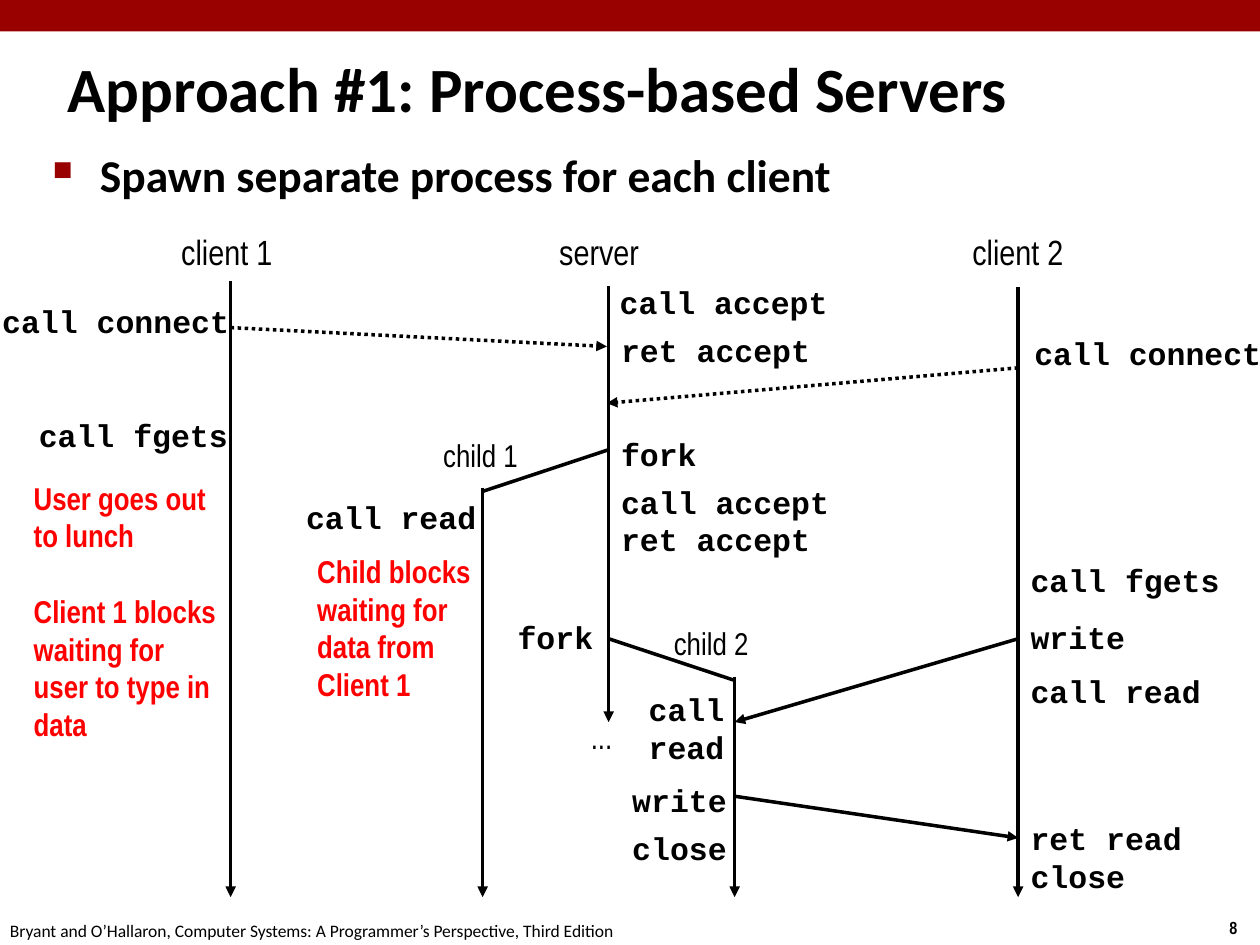
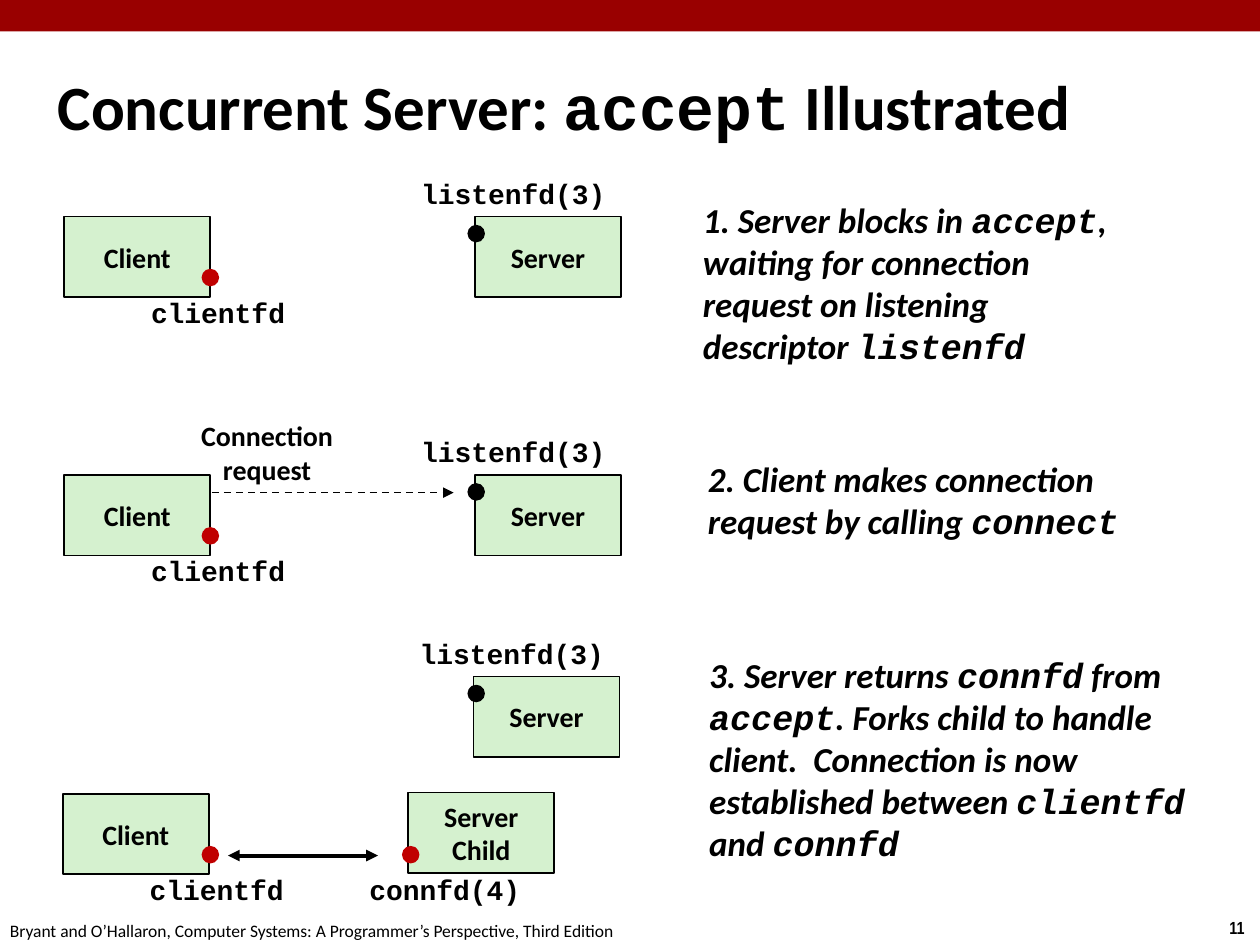
from pptx import Presentation
from pptx.dml.color import RGBColor
from pptx.enum.dml import MSO_LINE as Dash
from pptx.enum.shapes import MSO_CONNECTOR as Link, MSO_SHAPE as Shape
from pptx.enum.text import MSO_ANCHOR as Anchor, PP_ALIGN as Align
from pptx.oxml.ns import qn
from pptx.util import Pt
from lxml.etree import SubElement

BLACK = RGBColor(0x00, 0x00, 0x00)
WHITE = RGBColor(0xFF, 0xFF, 0xFF)
BAND_RED = RGBColor(0x99, 0x00, 0x00)
DOT_RED = RGBColor(0xC0, 0x00, 0x00)
ALERT_RED = RGBColor(0xFF, 0x00, 0x00)
PALE_GREEN = RGBColor(0xD5, 0xF1, 0xCF)

SANS, NARROW, MONO = "Calibri", "Arial Narrow", "Courier New"
FOOTER = "Bryant and O’Hallaron, Computer Systems: A Programmer’s Perspective, Third Edition"
NODE_WIDTH, NODE_HEIGHT, DOT_SIZE = 83.5, 46, 10
CENTERED = {"align": Align.CENTER, "anchor": Anchor.MIDDLE, "wrap": False}


def set_all(target, values):
    for name, value in values.items():
        setattr(target, name, value)


class Deck:
    def __init__(self):
        self.file = Presentation()
        set_all(self.file, {"slide_width": Pt(720), "slide_height": Pt(540)})
        self.page = None

    def new_page(self, number, title, *title_place):
        self.page = self.file.slides.add_slide(self.file.slide_layouts[6])
        background = self.page.background.fill
        background.solid()
        background.fore_color.rgb = WHITE
        self.shape(Shape.RECTANGLE, 0, 0, 720, 18, BAND_RED)
        self.text(number, 695.5, 520.6, 24.5, 19.4, font=NARROW, size=10, bold=True, wrap=False)
        self.text(FOOTER, -1.4, 522, 366, 19.4, size=10, wrap=False)
        self.text(title, *title_place, size=36, bold=True, anchor=Anchor.MIDDLE)

    def fill_text(self, box, words, font=SANS, size=18, bold=False, italic=False, color=BLACK,
                  align=Align.LEFT, anchor=Anchor.TOP, wrap=True):
        """Fill a box; newlines split paragraphs and backticks mark code."""
        frame = box.text_frame
        set_all(frame, {"word_wrap": wrap, "vertical_anchor": anchor})
        for index, line in enumerate(words.split("\n")):
            para = frame.add_paragraph() if index else frame.paragraphs[0]
            para.alignment = align
            for part, piece in enumerate(line.split("`")):
                if piece:
                    span = para.add_run()
                    span.text = piece
                    set_all(span.font, {"name": MONO if part % 2 else font, "size": Pt(size),
                                        "bold": bold, "italic": italic})
                    span.font.color.rgb = color

    def text(self, words, left, top, width, height, **style):
        box = self.page.shapes.add_textbox(Pt(left), Pt(top), Pt(width), Pt(height))
        self.fill_text(box, words, **style)
        return box

    def code(self, words, left, top, size=18, **style):
        longest = max(len(line) for line in words.split("\n"))
        style = {"font": MONO, "bold": True, "wrap": False, **style}
        self.text(words, left, top, longest * size * 0.6 + 14.4, size * 1.6, size=size, **style)

    def bullet(self, words, left, top, width, height, **style):
        box = self.text(words, left, top, width, height, **style)
        para = box.text_frame.paragraphs[0]
        para.space_before = Pt(5.2)
        props = para._p.get_or_add_pPr()
        props.set("marL", str(Pt(27)))
        props.set("indent", str(Pt(-27)))
        SubElement(SubElement(props, qn("a:buClr")), qn("a:srgbClr"), val=str(BAND_RED))
        SubElement(props, qn("a:buSzPct"), val="60000")
        SubElement(props, qn("a:buChar"), char="■")

    def shape(self, kind, left, top, width, height, fill, outline=None):
        box = self.page.shapes.add_shape(kind, Pt(left), Pt(top), Pt(width), Pt(height))
        box.shadow.inherit = False
        box.fill.solid()
        box.fill.fore_color.rgb = fill
        if outline is None:
            box.line.fill.background()
        else:
            box.line.color.rgb = outline
            box.line.width = Pt(1)
        return box

    def node(self, name, left, top):
        box = self.shape(Shape.RECTANGLE, left, top, NODE_WIDTH, NODE_HEIGHT, PALE_GREEN, BLACK)
        self.fill_text(box, name, size=16, bold=True, **CENTERED)

    def dot(self, left, top, color):
        self.shape(Shape.OVAL, left, top, DOT_SIZE, DOT_SIZE, color)

    def line(self, x1, y1, x2, y2, width=2, dash=None, ends=("tailEnd",)):
        link = self.page.shapes.add_connector(Link.STRAIGHT, Pt(x1), Pt(y1), Pt(x2), Pt(y2))
        link.line.color.rgb = BLACK
        set_all(link.line, {"width": Pt(width), "dash_style": dash})
        props = link._element.spPr
        SubElement(props, qn("a:effectLst"))
        for end in ends:
            SubElement(props.find(qn("a:ln")), qn("a:" + end), type="triangle")


def process_page(deck):
    deck.new_page("8", "Approach #1: Process-based Servers", 31.7, 19.4, 687, 61.2)
    deck.bullet("Spawn separate process for each client", 23, 80.6, 697, 426, size=26, bold=True)

    client_1, child_1, server, child_2, client_2 = 131.8, 275.8, 347.8, 419.8, 581.8
    for x, top, bottom in ((client_1, 160.5, 512.6), (server, 163.5, 412.6),
                           (client_2, 164.2, 512.6), (child_1, 278.6, 512.6),
                           (child_2, 386.6, 512.6)):
        deck.line(x, top, x, bottom)
    for request in ((client_1, 187.2, server - 1, 198), (client_2, 210.2, server - 1, 230.4)):
        deck.line(*request, dash=Dash.ROUND_DOT)
    for fork in ((server, 257, child_1, 280.8), (server, 365, child_2, 388.8)):
        deck.line(*fork, ends=())
    for message in ((client_2, 365, child_2, 412.6), (child_2, 455, client_2, 478.8)):
        deck.line(*message)

    for name, left, top, width, size in (
            ("client 1", 96.5, 128.2, 67, 20), ("server", 312.5, 128.2, 60.5, 20),
            ("client 2", 548.6, 128.2, 67, 20), ("child 1", 246.2, 245.5, 66, 18),
            ("child 2", 378, 352.8, 66, 18), ("...", 330.5, 406.8, 29.5, 18)):
        deck.text(name, left, top, width, 29, font=NARROW, size=size, wrap=False)

    for call, left, top in (
            ("call connect", -5.8, 169.2), ("call fgets", 15.1, 234),
            ("call accept", server - 0.8, 158.4), ("ret accept", server, 185.8),
            ("fork", server, 244.8), ("call accept", server, 272.2),
            ("ret accept", server, 293.8), ("call read", 167.8, 280.8),
            ("fork", 288.7, 349.9), ("call\nread", 363.6, 391),
            ("write", 354.2, 442.8), ("close", 354.2, 470.2),
            ("call connect", 584, 187.2), ("call fgets", client_2, 316.8),
            ("write", client_2, 349.9), ("call read", client_2, 380.2),
            ("ret read", client_2, 464.4), ("close", client_2, 486)):
        deck.code(call, left, top)

    alert = {"font": NARROW, "bold": True, "color": ALERT_RED}
    waiting = deck.text("User goes out to lunch\nClient 1 blocks\nwaiting for user to type in data",
                        12.2, 270, 120.2, 160, **alert)
    waiting.text_frame.paragraphs[1].space_before = Pt(21.5)
    deck.text("Child blocks waiting for data from Client 1", 174.2, 311.8, 120.2, 94.3, **alert)


def accept_page(deck):
    deck.new_page("11", "Concurrent Server: `accept` Illustrated", 25.9, 37.4, 660, 45.4)

    label = {"size": 16, **CENTERED}
    client_x, server_x, client_dot_x, server_dot_x = 36.7, 271.4, 115.2, 267.1
    for client_top, server_top, shift in ((123.8, 123.8, 0), (271.4, 271.4, 0),
                                          (453.6, 386.6, -0.8)):
        deck.node("Client", client_x + shift, client_top)
        deck.node("Server", server_x + shift, server_top)
        deck.code("clientfd", 79 + shift, client_top + 41.8, **label)
        deck.code("listenfd(3)", 233.3 + shift, server_top - 26.3, **label)
        deck.dot(client_dot_x, client_top + 29.8, DOT_RED)
        deck.dot(server_dot_x, server_top + 4.7, BLACK)

    deck.text("Connection\nrequest", 107.3, 235.4, 90.7, 46, size=16, bold=True, **CENTERED)
    deck.line(121, 281.5, 259.2, 281.5, width=1, dash=Dash.DASH)

    deck.node("Server\nChild", 233.3, 452.9)
    deck.dot(229.7, 483.4, DOT_RED)
    deck.code("connfd(4)", 203.8, 495.4, **label)
    deck.line(130.3, 488.9, 216, 488.9, width=2.25, ends=("headEnd", "tailEnd"))

    for step, left, top, width, height in (
            ("1. Server blocks in `accept`, waiting for connection request on listening "
             "descriptor `listenfd`", 394.6, 109.4, 259.2, 104.4),
            ("2. Client makes connection request by calling `connect`",
             397.4, 257.8, 288.7, 55.4),
            ("3. Server returns `connfd` from `accept`. Forks child to handle client.  "
             "Connection is now established between `clientfd` and `connfd`",
             398.2, 369.4, 316, 128.2)):
        deck.text(step, left, top, width, height, size=20, bold=True, italic=True,
                  anchor=Anchor.MIDDLE)


def main():
    deck = Deck()
    process_page(deck)
    accept_page(deck)
    deck.file.save("out.pptx")


if __name__ == "__main__":
    main()
